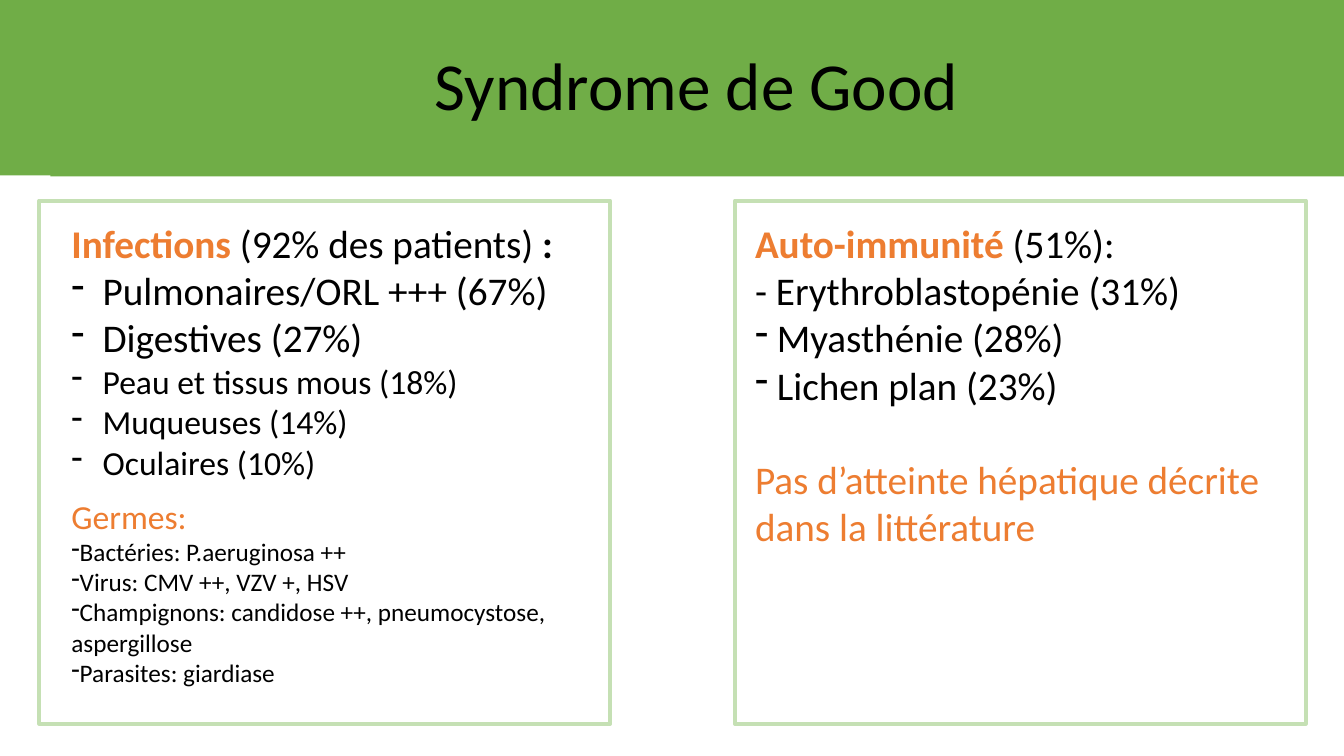
from lxml.etree import SubElement
from pptx import Presentation
from pptx.dml.color import RGBColor
from pptx.enum.shapes import MSO_SHAPE
from pptx.enum.text import MSO_ANCHOR, PP_ALIGN
from pptx.oxml.ns import qn
from pptx.util import Inches, Pt

GREEN = RGBColor(0x70, 0xAD, 0x47)
PALE_GREEN = RGBColor(0xC5, 0xE0, 0xB4)
ORANGE = RGBColor(0xED, 0x7D, 0x31)
BLACK = RGBColor(0, 0, 0)
FONT = "Calibri"
HANGING = 0.31


def add_rectangle(slide, left, top, width, height, fill=None, line=None):
    shape = slide.shapes.add_shape(
        MSO_SHAPE.RECTANGLE, Inches(left), Inches(top), Inches(width), Inches(height))
    shape.shadow.inherit = False
    if fill is None:
        shape.fill.background()
    else:
        shape.fill.solid()
        shape.fill.fore_color.rgb = fill
    if line is None:
        shape.line.fill.background()
    else:
        shape.line.color.rgb = line
        shape.line.width = Pt(3)


def add_text_frame(slide, left, top, width, height):
    text_box = slide.shapes.add_textbox(
        Inches(left), Inches(top), Inches(width), Inches(height))
    text_box.text_frame.word_wrap = True
    return text_box.text_frame


def set_dash(paragraph, indent):
    properties = paragraph._p.get_or_add_pPr()
    properties.set("marL", str(Inches(indent)))
    properties.set("indent", str(-Inches(indent)))
    SubElement(properties, qn("a:buFontTx"))
    SubElement(properties, qn("a:buChar")).set("char", "-")


def write_runs(paragraph, runs, size):
    for text, color, bold in runs:
        run = paragraph.add_run()
        run.text = text
        run.font.name = FONT
        run.font.size = Pt(size)
        run.font.bold = bold
        run.font.color.rgb = color


def write_lines(text_frame, lines):
    for index, (runs, size, indent) in enumerate(lines):
        paragraph = text_frame.paragraphs[0] if index == 0 else text_frame.add_paragraph()
        if indent is not None:
            set_dash(paragraph, indent)
        write_runs(paragraph, runs, size)


def plain(text, size, indent=None, color=BLACK):
    return [(text, color, False)], size, indent


def add_banner(slide, left, top, width, height):
    add_rectangle(slide, left, top, width, height, fill=GREEN)
    add_rectangle(slide, left + 0.5, top, width - 0.5, height + 0.01, fill=GREEN)
    text_frame = add_text_frame(slide, left + 1.5, top + 0.32, 10.82, 1.13)
    text_frame.vertical_anchor = MSO_ANCHOR.MIDDLE
    paragraph = text_frame.paragraphs[0]
    paragraph.alignment = PP_ALIGN.CENTER
    paragraph.line_spacing = 0.9
    write_runs(paragraph, [("Syndrome de Good", BLACK, False)], 48)


def add_infections_panel(slide, left, top, width, height):
    infections = add_text_frame(slide, left + 0.22, top + 0.14, 5.46, 3.03)
    heading = [("Infections ", ORANGE, True), ("(92% des patients) ", BLACK, False),
               (":", BLACK, True)]
    write_lines(infections, [
        (heading, 28, None),
        plain("Pulmonaires/ORL +++ (67%)", 28, HANGING),
        plain("Digestives (27%)", 28, HANGING),
        plain("Peau et tissus mous (18%)", 24, HANGING),
        plain("Muqueuses (14%)", 24, HANGING),
        plain("Oculaires (10%)", 24, HANGING),
    ])
    germs = add_text_frame(slide, left + 0.22, top + 2.88, 5.78, 2.32)
    write_lines(germs, [
        plain("Germes:", 24, color=ORANGE),
        plain("Bactéries: P.aeruginosa ++", 18, 0),
        plain("Virus: CMV ++, VZV +, HSV", 18, 0),
        plain("Champignons: candidose ++, pneumocystose, aspergillose", 18, 0),
        plain("Parasites: giardiase", 18, 0),
    ])
    add_rectangle(slide, left, top, width, height, line=PALE_GREEN)


def add_autoimmunity_panel(slide, left, top, width, height):
    add_rectangle(slide, left, top, width, height, line=PALE_GREEN)
    text_frame = add_text_frame(slide, left + 0.1, top + 0.14, 5.81, 3.7)
    heading = [("Auto-immunité ", ORANGE, True), ("(51%):", BLACK, False)]
    write_lines(text_frame, [
        (heading, 28, None),
        plain("- Erythroblastopénie (31%)", 28),
        plain(" Myasthénie (28%)", 28, 0),
        plain(" Lichen plan (23%)", 28, 0),
        plain("Pas d’atteinte hépatique décrite", 28, color=ORANGE),
        plain("dans la littérature", 28, color=ORANGE),
    ])
    text_frame.paragraphs[4].space_before = Pt(34)


def main():
    presentation = Presentation()
    presentation.slide_width = Inches(13.33)
    presentation.slide_height = Inches(7.5)
    slide = presentation.slides.add_slide(presentation.slide_layouts[6])
    add_banner(slide, 0, 0, 13.33, 1.74)
    add_infections_panel(slide, 0.39, 1.99, 5.66, 5.19)
    add_autoimmunity_panel(slide, 7.29, 1.99, 5.66, 5.19)
    presentation.save("out.pptx")


if __name__ == "__main__":
    main()
